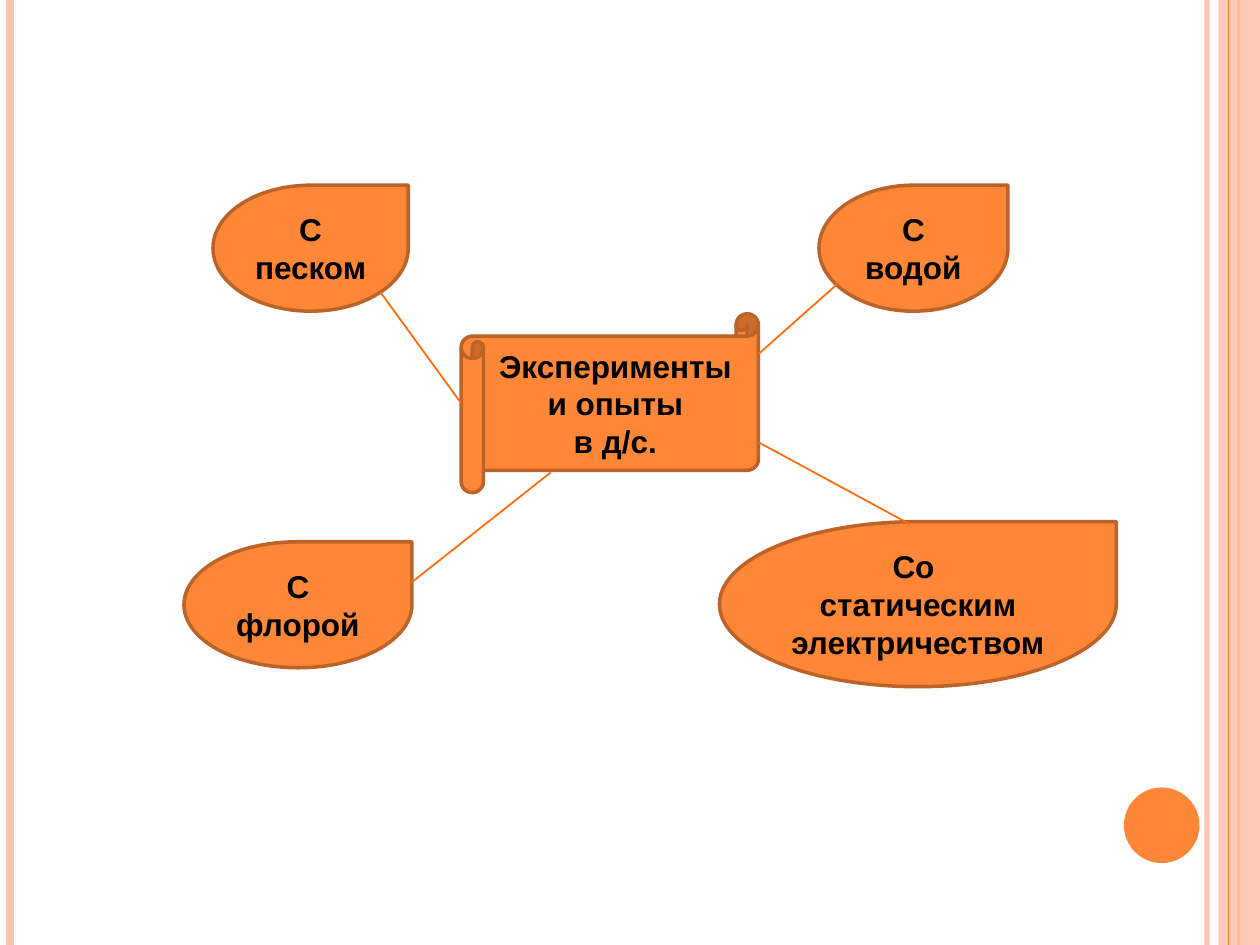
from lxml.etree import SubElement
from pptx import Presentation
from pptx.dml.color import RGBColor
from pptx.enum.shapes import MSO_CONNECTOR, MSO_SHAPE
from pptx.enum.text import MSO_ANCHOR, PP_ALIGN
from pptx.oxml.ns import qn
from pptx.util import Inches, Pt

ORANGE, BROWN, PEACH, LINK = "FE8637", "BC6329", "FEC3AE", "FF6B0A"


def color(code):
    return RGBColor.from_string(code)


def fade(fill, part, share):
    """Set the opacity, in percent, of a solid fill inside part."""
    fill.solid()
    tone = part.find(".//" + qn("a:srgbClr"))
    SubElement(tone, qn("a:alpha"), val=str(share * 1000))


class Board:
    font, size, ink = "Arial", 18, "000000"

    def __init__(self, slide):
        self.slide = slide

    def shape(self, kind, box, fill=ORANGE, edge=None, share=None):
        item = self.slide.shapes.add_shape(kind, *map(Inches, box))
        item.shadow.inherit = False
        item.fill.solid()
        item.fill.fore_color.rgb = color(fill)
        if share:
            fade(item.fill, item._element.spPr, share)
        if edge:
            item.line.color.rgb = color(edge)
            item.line.width = Pt(2)
        else:
            item.line.fill.background()
        return item

    def label(self, kind, box, text):
        item = self.shape(kind, box, edge=BROWN)
        frame = item.text_frame
        frame.word_wrap = True
        frame.vertical_anchor = MSO_ANCHOR.MIDDLE
        frame.text = text
        for par in frame.paragraphs:
            par.alignment = PP_ALIGN.CENTER
            for run in par.runs:
                run.font.name = self.font
                run.font.size = Pt(self.size)
                run.font.bold = True
                run.font.color.rgb = color(self.ink)
        return item

    def line(self, start, end, tone=LINK, width=1, share=None):
        item = self.slide.shapes.add_connector(
            MSO_CONNECTOR.STRAIGHT, *map(Inches, (*start, *end)))
        item.line.color.rgb = color(tone)
        item.line.width = Pt(width)
        if share:
            fade(item.line.fill, item._element.spPr, share)
        SubElement(item._element.spPr, qn("a:effectLst"))
        return item

    def stripe(self, x, tone, width, share=None):
        self.line((x, 0), (x, 7.5), tone, width, share)


def main():
    deck = Presentation()
    deck.slide_width, deck.slide_height = Inches(10), Inches(7.5)
    board = Board(deck.slides.add_slide(deck.slide_layouts[6]))

    # Side stripes and corner dot
    board.stripe(9.58, PEACH, 3, 93)
    board.stripe(0.08, PEACH, 4.5)
    board.stripe(9.83, ORANGE, 1.5)
    board.shape(MSO_SHAPE.RECTANGLE, (9.67, 0, 0.33, 7.5), PEACH, share=87)
    board.stripe(9.75, ORANGE, 0.75)
    board.shape(MSO_SHAPE.OVAL, (8.92, 6.25, 0.6, 0.6))

    # Central topic
    scroll = board.label(MSO_SHAPE.HORIZONTAL_SCROLL, (3.66, 2.49, 2.36, 1.42),
                         "Эксперименты\nи опыты\nв д/с.")

    # Kinds of experiment
    for box, text in (
        ((1.46, 4.3, 1.81, 1), "С флорой"),
        ((1.69, 1.47, 1.55, 1), "С песком"),
        ((6.5, 1.47, 1.5, 1), "С водой"),
        ((5.71, 4.14, 3.15, 1.31), "Со \nстатическим электричеством"),
    ):
        board.label(MSO_SHAPE.TEAR, box, text)

    # Links to the topic
    sand = board.line((3.02, 2.32), (3.66, 3.2))
    sand.end_connect(scroll, 1)
    board.line((3.27, 4.62), (4.37, 3.75))
    board.line((6.65, 2.25), (6.02, 2.81))
    board.line((6.02, 3.51), (7.22, 4.16))

    deck.save("out.pptx")


if __name__ == "__main__":
    main()
